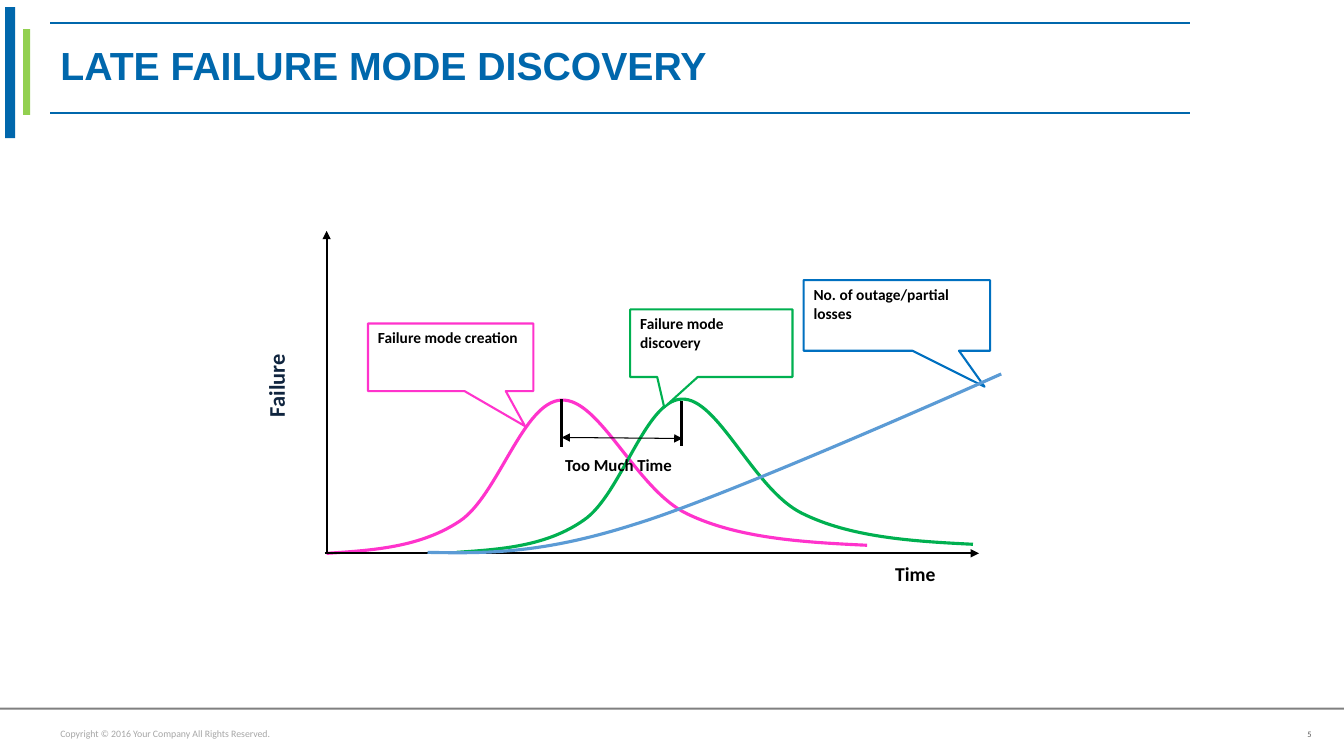
from lxml import etree
from pptx import Presentation
from pptx import util as u
from pptx.dml import color
from pptx.enum import shapes, text
from pptx.oxml import ns

PX = 9144
SIZE = (1333, 750)
BLUE, PINK, GREEN, BLACK = "0067AC", "FF33CC", "00B050", "000000"
WHITE = "FFFFFF"

BARS = [
    ((23, 29, 7, 85), "92D050"),
    ((5, 7, 10, 130), BLUE),
    ((0, 702, 1333, 2), "808080"),
]
RULES = [((50, y), (1180, y), BLUE, 1.5, "") for y in (112, 23)]
AXES = [
    ((322, 549), (971, 549), BLACK, 1.5, "tail"),
    ((324, 549), (324, 229), BLACK, 1.5, "tail"),
]
SPAN = [
    ((557, 396), (557, 443), BLACK, 2.25, ""),
    ((676, 398), (676, 442), BLACK, 2.25, ""),
    ((557, 434), (677, 435), BLACK, 0.75, "head tail"),
]
TITLE = ("LATE FAILURE MODE DISCOVERY", (50, 29, 1138, 77))
HUMPS = [
    (PINK, [(324, 549), (370, 546), (417, 543), (456, 517),
            (494, 492), (519, 398), (557, 397),
            (595, 395), (631, 486), (682, 510),
            (732, 534), (796, 538), (860, 541)]),
    (GREEN, [(453, 548), (497, 545), (542, 542), (579, 516),
             (616, 491), (640, 397), (676, 396),
             (712, 394), (747, 485), (795, 509),
             (843, 533), (904, 537), (965, 540)]),
]
LOSS = ("5B9BD5", [(424, 548), (480, 549), (536, 550), (630, 520),
                   (725, 491), (993, 371), (993, 371)])
CALLS = [
    ("Failure mode discovery", (625, 307, 161, 67), (-0.29, 0.95), GREEN),
    ("Failure mode creation", (365, 321, 164, 67), (0.45, 1.02), PINK),
    ("No. of outage/partial losses", (797, 278, 185, 70), (0.47, 1.01), "0070C0"),
]
LEFT, MID, RIGHT = text.PP_ALIGN.LEFT, text.PP_ALIGN.CENTER, text.PP_ALIGN.RIGHT
LABELS = [
    ("Too Much Time", (533, 446, 161, 61), 12, BLACK, True, MID, {}),
    ("Time", (878, 553, 103, 34), 14, BLACK, True, LEFT, {}),
    ("Failure", (239, 346, 94, 61), 16, "0F243E", True, LEFT, {"rotation": 270}),
    ("Copyright © 2016 Your Company All Rights Reserved.",
     (50, 717, 1252, 23), 7, "A6A6A6", False, LEFT, {}),
]
PAGE = ("5", (1246, 717, 55, 25), 6, "595959", False, RIGHT, {})


def rgb(code):
    return color.RGBColor.from_string(code)


def emu(nums):
    return [n * PX for n in nums]


def put(obj, **vals):
    for key, val in vals.items():
        setattr(obj, key, val)


def ink(line, code, width):
    line.color.rgb = rgb(code)
    line.width = u.Pt(width)


def write(shape, words, size, code, bold=True, align=LEFT, face="Calibri"):
    frame = shape.text_frame
    put(frame, word_wrap=True, auto_size=text.MSO_AUTO_SIZE.NONE,
        vertical_anchor=text.MSO_ANCHOR.TOP)
    para = frame.paragraphs[0]
    para.text = words
    para.alignment = align
    put(para.font, size=u.Pt(size), bold=bold, name=face)
    para.font.color.rgb = rgb(code)
    return frame


def shape(kind, box, fill):
    item = tree.add_shape(kind, *emu(box))
    item.shadow.inherit = False
    item.fill.solid()
    item.fill.fore_color.rgb = rgb(fill)
    item.line.fill.background()
    return item


def link(start, end, code, width, tips):
    item = tree.add_connector(shapes.MSO_CONNECTOR.STRAIGHT, *emu(start + end))
    ink(item.line, code, width)
    props = item.element.spPr
    for tip in tips.split():
        etree.SubElement(props.find(ns.qn("a:ln")), ns.qn(f"a:{tip}End"), type="triangle")
    etree.SubElement(props, ns.qn("a:effectLst"))


def curve(code, dots):
    pen = tree.build_freeform(*dots[0], scale=PX)
    pen.add_line_segments(dots[1:], close=False)
    item = pen.convert_to_shape()
    item.shadow.inherit = False
    item.fill.background()
    ink(item.line, code, 2.25)
    steps = list(item.element.iter(ns.qn("a:lnTo")))
    for i in range(0, len(steps), 3):
        bend = etree.Element(ns.qn("a:cubicBezTo"))
        steps[i].addprevious(bend)
        for step in steps[i:i + 3]:
            bend.append(step[0])
            step.getparent().remove(step)


def label(words, box, size, code, bold, align, extra):
    item = tree.add_textbox(*emu(box))
    put(item, **extra)
    return write(item, words, size, code, bold, align)


deck = Presentation()
deck.slide_width, deck.slide_height = emu(SIZE)
slide = deck.slides.add_slide(deck.slide_layouts[5])
tree = slide.shapes

words, box = TITLE
head = tree.title
put(head, **dict(zip(("left", "top", "width", "height"), emu(box))))
frame = write(head, words, 28, BLUE, face="Arial")
frame.vertical_anchor = text.MSO_ANCHOR.MIDDLE
frame.paragraphs[0].line_spacing = 0.9

for box, fill in BARS:
    shape(shapes.MSO_SHAPE.RECTANGLE, box, fill)
for hump in HUMPS:
    curve(*hump)
for line in RULES + AXES:
    link(*line)
for words, box, tip, code in CALLS:
    call = shape(shapes.MSO_SHAPE.RECTANGULAR_CALLOUT, box, WHITE)
    call.adjustments[0], call.adjustments[1] = tip
    ink(call.line, code, 1.5)
    write(call, words, 11, BLACK)
for line in SPAN:
    link(*line)
for item in LABELS:
    label(*item)
put(label(*PAGE), margin_left=6 * PX, margin_top=6 * PX, margin_right=0, margin_bottom=0)
curve(*LOSS)

deck.save("out.pptx")
